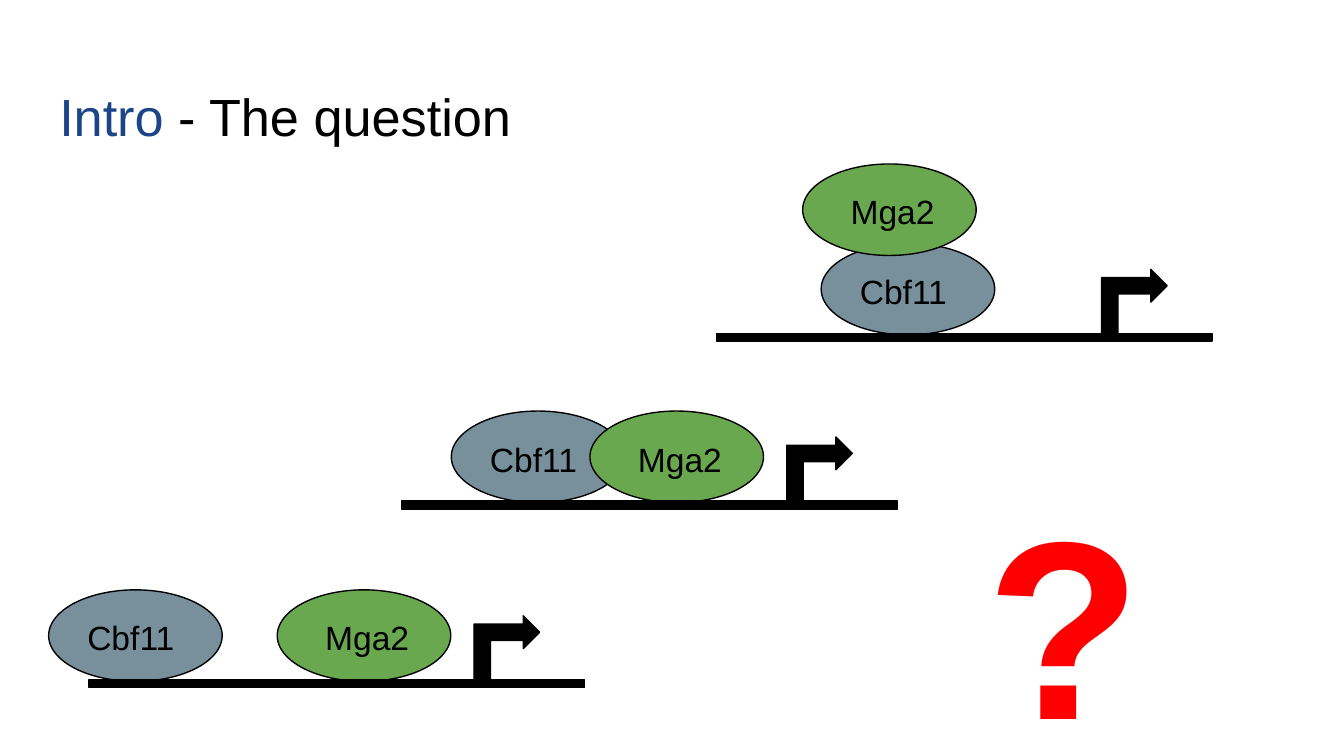
from pptx import Presentation
from pptx.dml.color import RGBColor
from pptx.enum.shapes import MSO_SHAPE
from pptx.enum.text import MSO_ANCHOR, MSO_AUTO_SIZE, PP_ALIGN
from pptx.util import Cm, Pt

OVAL, BAR, ARROW = MSO_SHAPE.OVAL, MSO_SHAPE.RECTANGLE, MSO_SHAPE.BENT_UP_ARROW
TOP, MIDDLE = MSO_ANCHOR.TOP, MSO_ANCHOR.MIDDLE
LEFT = PP_ALIGN.LEFT
NO_AUTOFIT = MSO_AUTO_SIZE.NONE
TITLE_ONLY = 5

# Content: lengths in cm, protein offsets are from the DNA's top left corner
TITLE = [("Intro", "accent"), (" - The question", "black")]
QUESTION = [("?", "red")]
PROTEINS = {"cbf11": ("Cbf11", "slate"), "mga2": (" Mga2", "green")}
MODELS = [
    {"dna": (1.68, 12.85), "cbf11": (-0.76, -1.7), "mga2": (3.56, -1.7)},
    {"dna": (7.59, 9.47), "cbf11": (0.94, -1.7), "mga2": (3.56, -1.7)},
    {"dna": (13.54, 6.3), "cbf11": (1.98, -1.7), "mga2": (1.63, -3.2)},
]

# Theme and measures
THEME = {
    "font": "Arial", "title": 28, "label": 18, "question": 136,
    "line_width": 0.75, "line_spacing": 1.09,
    "accent": "1C4587", "black": "000000", "red": "FF0000",
    "slate": "78909C", "green": "6AA84F",
}
PROTEIN_SIZE = (3.28, 1.73)
DNA_SIZE = (9.37, 0.15)
ARROW_OFFSET, ARROW_SIZE = (7.24, -1.17), (1.32, 1.24)


def color(name):
    return RGBColor.from_string(THEME[name])


def write_text(shape, runs, size, anchor=TOP, bold=False):
    frame = shape.text_frame
    frame.word_wrap = True
    frame.auto_size = NO_AUTOFIT
    frame.vertical_anchor = anchor
    frame.margin_left = frame.margin_right = Cm(0.25)
    frame.margin_top = frame.margin_bottom = Cm(0.25)
    paragraph = frame.paragraphs[0]
    paragraph.alignment = LEFT
    paragraph.line_spacing = THEME["line_spacing"]
    for text, color_name in runs:
        run = paragraph.add_run()
        run.text = text
        run.font.name = THEME["font"]
        run.font.size = Pt(THEME[size])
        run.font.bold = bold
        run.font.color.rgb = color(color_name)


def add_part(slide, kind, origin, offset, size, fill):
    left, top = (start + step for start, step in zip(origin, offset))
    shape = slide.shapes.add_shape(kind, Cm(left), Cm(top), *map(Cm, size))
    shape.shadow.inherit = False
    shape.fill.solid()
    shape.fill.fore_color.rgb = color(fill)
    shape.line.color.rgb = color("black")
    shape.line.width = Pt(THEME["line_width"])
    return shape


def add_model(slide, model):
    origin = model["dna"]
    for key, (name, fill) in PROTEINS.items():
        protein = add_part(slide, OVAL, origin, model[key], PROTEIN_SIZE, fill)
        write_text(protein, [(name, "black")], "label", anchor=MIDDLE)
    add_part(slide, BAR, origin, (0, 0), DNA_SIZE, "black")
    # Transcription start: mirrored and turned to point right
    arrow = add_part(slide, ARROW, origin, ARROW_OFFSET, ARROW_SIZE, "black")
    arrow.rotation = 90
    arrow.element.spPr.xfrm.set("flipH", "1")


def main():
    presentation = Presentation()
    presentation.slide_width, presentation.slide_height = Cm(25.4), Cm(14.29)
    slide = presentation.slides.add_slide(presentation.slide_layouts[TITLE_ONLY])

    # Title
    title = slide.shapes.title
    title.left, title.top, title.width, title.height = map(Cm, (0.87, 1.24, 23.67, 1.6))
    write_text(title, TITLE, "title")

    # Binding models
    for model in MODELS:
        add_model(slide, model)

    # Question mark
    box = slide.shapes.add_textbox(*map(Cm, (18.39, 8.03, 3.48, 6.32)))
    write_text(box, QUESTION, "question", bold=True)

    presentation.save("out.pptx")


if __name__ == "__main__":
    main()
